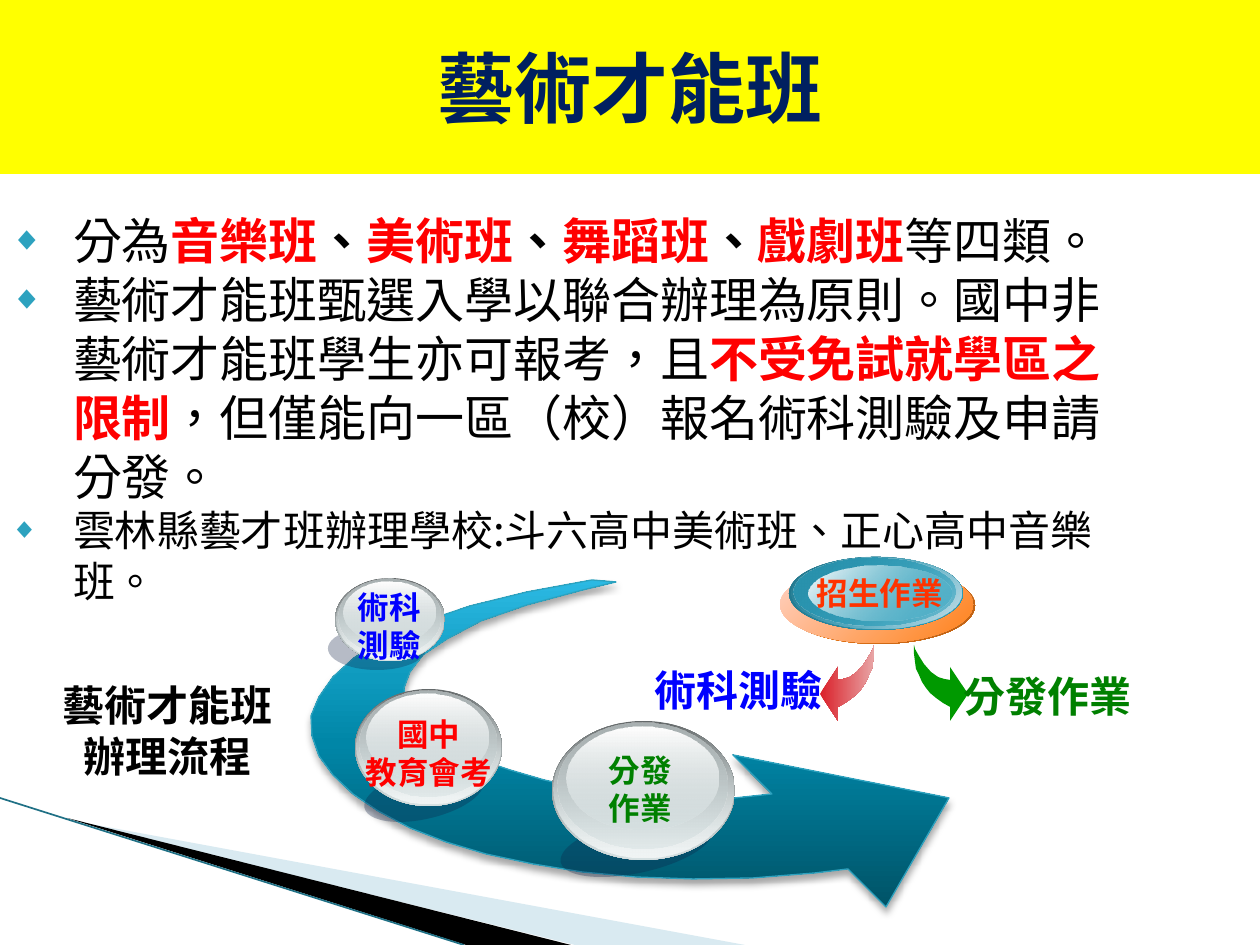
from lxml.etree import SubElement
from pptx import Presentation
from pptx.dml.color import RGBColor
from pptx.enum.lang import MSO_LANGUAGE_ID
from pptx.enum.shapes import MSO_CONNECTOR, MSO_SHAPE
from pptx.enum.text import MSO_ANCHOR, MSO_AUTO_SIZE, PP_ALIGN
from pptx.oxml.ns import qn
from pptx.util import Pt

PX = 914400 / 126
FONT = "Noto Sans CJK SC"
BLACK = RGBColor(0, 0, 0)
RED = RGBColor(255, 0, 0)
BLUE = RGBColor(0, 0, 255)
GREEN = RGBColor(0, 128, 0)
LEAF = RGBColor(0, 153, 0)
NAVY = RGBColor(0, 32, 96)
YELLOW = RGBColor(255, 255, 0)
ORANGE = RGBColor(255, 51, 0)
TEAL = RGBColor(0x2D, 0xA2, 0xBF)
SHADE = RGBColor(0x0F, 0x21, 0x45)
PALE = RGBColor(0xA0, 0xCB, 0xDC)
EDGE = RGBColor(0x1F, 0x70, 0x85)

TITLE = "藝術才能班"
# Each item: size, then (text, stressed colour or None) runs
ITEMS = [
    (28, [("分為", None), ("音樂班", RED), ("、", BLACK), ("美術班", RED),
          ("、", BLACK), ("舞蹈班", RED), ("、", BLACK), ("戲劇班", RED),
          ("等四類。", None)]),
    (28, [("藝術才能班甄選入學以聯合辦理為原則。國中非藝術才能班學生亦可報考，且", None),
          ("不受免試就學區之限制", RED),
          ("，但僅能向一區（校）報名術科測驗及申請分發。", None)]),
    (24, [("雲林縣藝才班辦理學校:斗六高中美術班、正心高中音樂班。", None)]),
]
FLOW = ["藝術才能班", "辦理流程"]

# Ball: box, shade box, shade turn, lines, text box, colour, wrap
BALLS = [
    ((552, 721, 183, 139), (559, 819, 155, 54), -12.1, ["分發", "作業"],
     (571, 745, 139, 86), GREEN, True),
    ((355, 689, 147, 117), (363, 770, 122, 49), -12.9, ["國中", "教育會考"],
     (353, 709, 152, 86), RED, False),
    ((335, 578, 110, 83), (328, 627, 98, 43), 0, ["術科", "測驗"],
     (345, 582, 89, 86), BLUE, False),
]
# Layer: left, top, width, height as shares of the ball; gradient stops
LAYERS = [
    ((0, 0, 1, 1), [(0, "636869", 100), (100, "D6E1E2", 100)]),
    ((.01, 0, .98, .98), [(0, "D6E1E2", 0), (100, "F1F5F5", 100)]),
    ((.03, .01, .93, .91), [(0, "AAB2B3", 100), (100, "D6E1E2", 48)]),
    ((.08, .04, .83, .74), [(0, "FFFFFF", 100), (100, "D6E1E2", 38)]),
]
BADGE = [
    ((782, 567, 193, 77), [(0, "FF8119", 100), (100, "BA5E12", 100)]),
    ((780, 566, 193, 77), [(0, "FFD3C6", 100), (100, "FF8119", 100)]),
    ((789, 557, 174, 73), [(0, "207489", 100), (100, "2DA2BF", 100)]),
    ((791, 557, 170, 72), [(0, "2DA2BF", 0), (100, "D4E4EB", 100)]),
    ((794, 558, 161, 67), [(0, "2992AD", 100), (100, "2DA2BF", 48)]),
    ((809, 566, 142, 54), [(0, "FFFFFF", 100), (100, "2DA2BF", 38)]),
]
LABELS = [("術科測驗", (642, 668, 193, 44), BLUE),
          ("分發作業", (951, 674, 193, 44), GREEN)]

SWOOSH = [
    (592, 580), (527, 592), (470, 606), (423, 622), (384, 639), (354, 658),
    (333, 677), (319, 697), (311, 716), (312, 736), (319, 756), (333, 775),
    (353, 794), (378, 811), (410, 828), (446, 842), (486, 854), (533, 864),
    (582, 872), (635, 877), (693, 879), (753, 878), (815, 873), (848, 869),
    (886, 907), (949, 798), (733, 755), (772, 794), (735, 798), (697, 798),
    (656, 796), (617, 794), (580, 788), (544, 780), (510, 770), (480, 760),
    (454, 747), (431, 733), (416, 719), (406, 704), (404, 688), (410, 672),
    (423, 655), (447, 639), (481, 621), (527, 605), (583, 590), (616, 582)]
SWEEP = [(0, "005367", 100), (50, "0086A7", 100),
         (70, "0E9ABE", 100), (100, "2CB9E3", 100)]
HOOK = [
    (874, 645), (874, 654), (873, 662), (872, 669), (869, 675), (866, 682),
    (862, 688), (858, 693), (852, 698), (845, 703), (838, 707), (838, 721),
    (820, 694), (838, 667), (838, 680), (844, 679), (850, 677), (857, 672),
    (864, 664), (869, 656), (873, 649)]
AXIS = 894
BLUSH = [(0, "DA1F28", 100), (100, "E8A5A6", 100)]
WEDGES = [([(69, 820), (745, 945), (575, 945)], PALE, 40),
          ([(67, 818), (571, 945), (466, 945)], BLACK, 100)]

deck = Presentation()
deck.slide_width, deck.slide_height = int(1260 * PX), int(945 * PX)
slide = deck.slides.add_slide(deck.slide_layouts[1])
shapes = slide.shapes


def emu(box):
    return [int(n * PX) for n in box]


def place(shape, box):
    shape.left, shape.top, shape.width, shape.height = emu(box)


def plain(shape):
    shape.shadow.inherit = False
    shape.line.fill.background()
    return shape


def solid(shape, color, alpha=100):
    shape.fill.solid()
    shape.fill.fore_color.rgb = color
    if alpha < 100:
        tone = shape.fill._xPr.find(qn("a:solidFill"))[0]
        SubElement(tone, qn("a:alpha"), val=str(alpha * 1000))


def blend(shape, stops, angle):
    shape.fill.gradient()
    grad = shape.fill._xPr.find(qn("a:gradFill"))
    for part in list(grad):
        grad.remove(part)
    row = SubElement(grad, qn("a:gsLst"))
    for pos, color, alpha in stops:
        stop = SubElement(row, qn("a:gs"), pos=str(pos * 1000))
        tone = SubElement(stop, qn("a:srgbClr"), val=color)
        if alpha < 100:
            SubElement(tone, qn("a:alpha"), val=str(alpha * 1000))
    SubElement(grad, qn("a:lin"), ang=str(angle * 60000), scaled="0")


def oval(box):
    return plain(shapes.add_shape(MSO_SHAPE.OVAL, *emu(box)))


def outline(points):
    pen = shapes.build_freeform(*points[0], scale=PX)
    pen.add_line_segments(points[1:], close=True)
    return plain(pen.convert_to_shape())


def style(para, size, color, bold):
    font = para.font
    font.size, font.bold, font.name = Pt(size), bold, FONT
    font.color.rgb = color
    font.language_id = MSO_LANGUAGE_ID.TRADITIONAL_CHINESE
    SubElement(font._element, qn("a:ea"), typeface=FONT)


def write(shape, lines, size, color, wrap=True, anchor=MSO_ANCHOR.MIDDLE):
    """Put centred bold lines into a shape."""
    frame = shape.text_frame
    frame.auto_size, frame.word_wrap = MSO_AUTO_SIZE.NONE, wrap
    frame.vertical_anchor = anchor
    frame.text = "\n".join(lines)
    for para in frame.paragraphs:
        para.alignment = PP_ALIGN.CENTER
        if len(lines) > 1:
            para.line_spacing = Pt(size * 1.2)
        style(para, size, color, True)
    return frame


def stack(lines, box, size, color, wrap=True):
    text = shapes.add_textbox(*emu(box))
    frame = write(text, lines, size, color, wrap, MSO_ANCHOR.TOP)
    frame.margin_top = int(6 * PX)


def bullet(para):
    props = para._p.get_or_add_pPr()
    props.set("marL", str(int(63 * PX)))
    props.set("indent", str(int(-63 * PX)))
    tone = SubElement(props, qn("a:buClr"))
    SubElement(tone, qn("a:srgbClr"), val=str(TEAL))
    SubElement(props, qn("a:buSzPct"), val="68000")
    SubElement(props, qn("a:buChar"), char="◆")


for points, color, alpha in WEDGES:
    solid(outline(points), color, alpha)
rim = shapes.add_connector(MSO_CONNECTOR.STRAIGHT, *emu((0, 798, 464, 945)))
rim.line.color.rgb, rim.line.width = EDGE, Pt(0.95)
SubElement(rim._element.spPr, qn("a:effectLst"))

title, body = shapes.title, slide.placeholders[1]
place(title, (0, 0, 1260, 174))
solid(title, YELLOW)
write(title, [TITLE], 44, NAVY)

place(body, (0, 204, 1115, 328))
frame = body.text_frame
frame.auto_size, frame.margin_top = MSO_AUTO_SIZE.NONE, int(7 * PX)
frame.margin_left = frame.margin_right = int(10 * PX)
for i, (size, runs) in enumerate(ITEMS):
    para = frame.add_paragraph() if i else frame.paragraphs[0]
    para.space_before, para.line_spacing = Pt(0), Pt(size * 1.2)
    bullet(para)
    style(para, size, BLACK, False)
    for text, color in runs:
        run = para.add_run()
        run.text = text
        if color is not None:
            run.font.bold, run.font.color.rgb = True, color

arrow = outline(SWOOSH)
blend(arrow, SWEEP, 270)
arrow.line.color.rgb, arrow.line.width = TEAL, Pt(0.75)
glow = SubElement(arrow._element.spPr.find(qn("a:effectLst")),
                  qn("a:outerShdw"), blurRad=str(Pt(4)), dist=str(Pt(3)),
                  dir="5400000", rotWithShape="0")
tone = SubElement(glow, qn("a:srgbClr"), val=str(BLACK))
SubElement(tone, qn("a:alpha"), val="35000")

for (x, y, w, h), under, turn, lines, spot, color, wrap in BALLS:
    shade = oval(under)
    solid(shade, SHADE, 30)
    shade.rotation = turn
    for (dx, dy, sx, sy), stops in LAYERS:
        blend(oval((x + dx * w, y + dy * h, sx * w, sy * h)), stops, 90)
    stack(lines, spot, 18, color, wrap)

blend(outline(HOOK), BLUSH, 0)
solid(outline([(2 * AXIS - x, y) for x, y in HOOK]), LEAF)
for box, stops in BADGE:
    disc = oval(box)
    blend(disc, stops, 45)
write(disc, ["招生作業"], 18, ORANGE, False)

for text, box, color in LABELS:
    label = plain(shapes.add_shape(MSO_SHAPE.ROUNDED_RECTANGLE, *emu(box)))
    label.fill.background()
    frame = write(label, [text], 24, color)
    frame.margin_left = frame.margin_right = 0

stack(FLOW, (44, 674, 247, 115), 24, BLACK)
deck.save("out.pptx")
